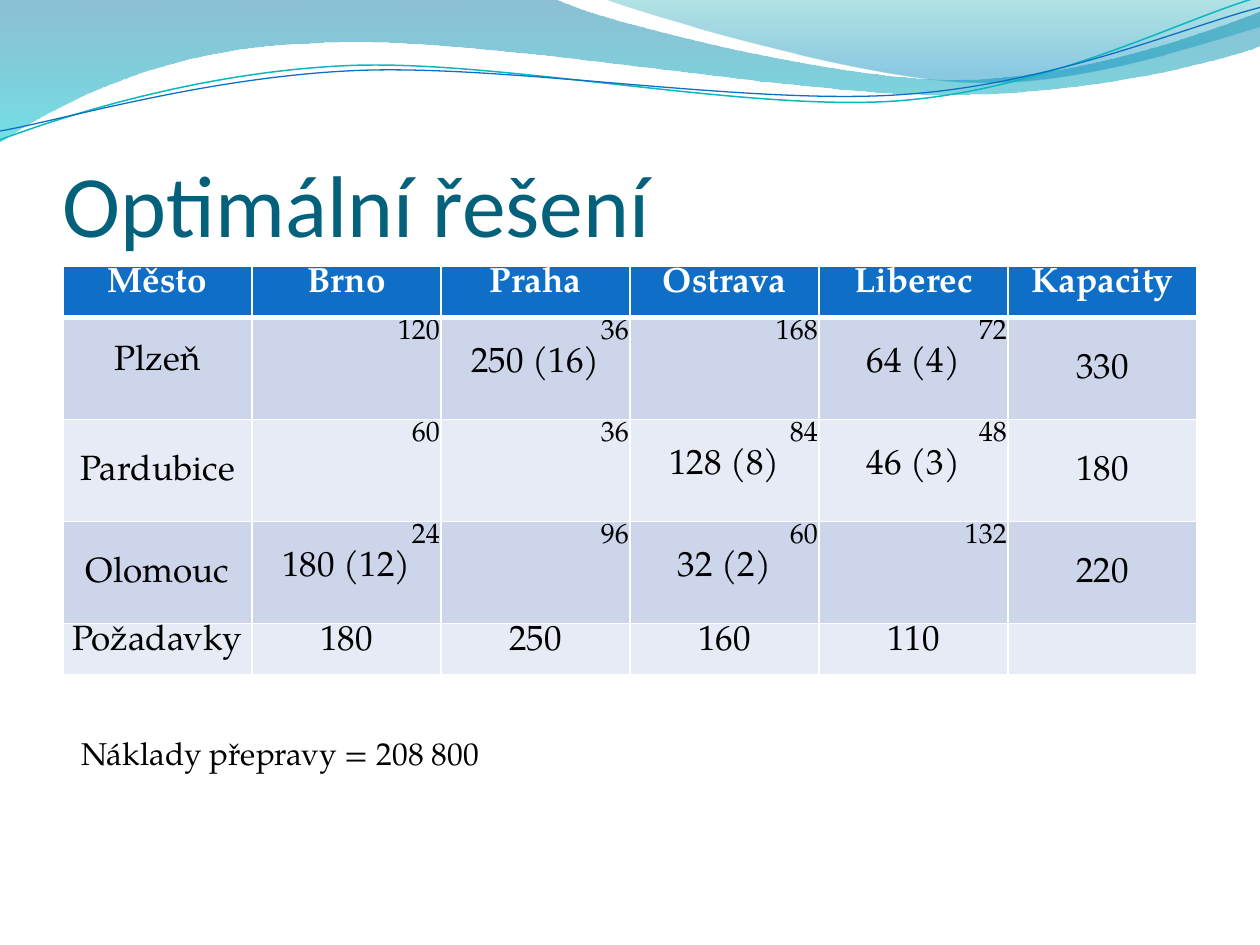
from math import cos, radians, sin

from lxml.etree import SubElement
from pptx import Presentation
from pptx.dml.color import RGBColor
from pptx.enum.text import MSO_ANCHOR, PP_ALIGN
from pptx.oxml import parse_xml
from pptx.oxml.ns import nsdecls, qn
from pptx.util import Inches, Pt

HEADING_FONT, BODY_FONT = "Calibri", "TeX Gyre Pagella"
WHITE, BLACK, BLUE, TEAL = "FFFFFF", "000000", "0F6FC6", "04617B"
BANDS = ("CCD5EA", "E7EBF5")

TITLE = "Optimální řešení"
COST = "Náklady přepravy = 208 800"
HEADER = ["Město", "Brno", "Praha", "Ostrava", "Liberec", "Kapacity"]
# City, (unit cost, shipment) per destination, capacity
ROUTES = [
    ("Plzeň", [("120", ""), ("36", "250 (16)"), ("168", ""), ("72", "64 (4)")], "330"),
    ("Pardubice", [("60", ""), ("36", ""), ("84", "128 (8)"), ("48", "46 (3)")], "180"),
    ("Olomouc", [("24", "180 (12)"), ("96", ""), ("60", "32 (2)"), ("132", "")], "220"),
]
DEMAND = ["Požadavky", "180", "250", "160", "110", ""]
ROW_HEIGHTS = [0.41, 0.81, 0.81, 0.81, 0.41]
COLUMN_WIDTH = 1.5
LINE_16, LINE_20 = 0.22, 0.28  # room above a name or capacity: one line of 16 or 20 points

# A path is a start point and then steps: 2 numbers for a line, 6 for a curve.
WAVES = [
    ((0, 0),
     [(4.4, -0.01), (4.76, 0.17, 6.64, 0.63, 7.58, 0.63),
      (8.53, 0.63, 9.58, 0.26, 10, 0.09), (10.01, 0.36),
      (9.83, 0.44, 8.7, 0.76, 7.46, 0.75), (6.22, 0.75, 3.82, 0.28, 2.57, 0.34),
      (1.29, 0.36, 0.46, 0.83, -0.01, 1.13)],
     [(0, "0074A1", 45), (100, "00C6CF", 55)]),
    ((4.79, -0.01),
     [(5.09, 0.11, 6.82, 0.62, 7.69, 0.65), (8.56, 0.69, 9.61, 0.32, 10, 0.21), (10, 0)],
     [(0, "00A1A9", 30), (80, "008BBF", 45)]),
]
STRAND_TILT = -2.7
STRANDS = [
    ((0, 1.11),
     [(0.48, 0.93, 1.58, 0.57, 2.77, 0.52), (3.95, 0.47, 5.93, 0.89, 7.13, 0.8),
      (8.33, 0.71, 9.38, 0.15, 9.98, -0.02)], (4.99, 0.57), "0AB8BF", 0.85),
    ((0, 1.04),
     [(0.47, 0.96, 1.64, 0.61, 2.83, 0.56), (4.03, 0.51, 5.97, 0.84, 7.17, 0.75),
      (8.36, 0.67, 9.41, 0.21, 10, 0.06)], (5, 0.59), BLUE, 0.75),
]


def color(value):
    return RGBColor.from_string(value)


def turn(point, center, degrees):
    angle = radians(degrees)
    x, y = point[0] - center[0], point[1] - center[1]
    return (center[0] + x * cos(angle) - y * sin(angle),
            center[1] + x * sin(angle) + y * cos(angle))


def add_path(slide, start, steps, close, center=(0, 0), tilt=0):
    """Draw a path of lines and curves; a tilt is held as the rotation of the shape."""
    points = [start] + [step[i:i + 2] for step in steps for i in range(0, len(step), 2)]
    points = [tuple(map(Inches, turn(point, center, -tilt))) for point in points]
    builder = slide.shapes.build_freeform(*points[0])
    builder.add_line_segments(points[1:], close=close)
    shape = builder.convert_to_shape()
    shape.shadow.inherit = False
    shape.rotation = tilt

    # Each curve came out as three line segments: join them into one Bezier segment.
    segments = iter(list(shape._element.iter(qn("a:lnTo"))))
    for step in steps:
        segment = next(segments)
        if len(step) == 6:
            segment.tag = qn("a:cubicBezTo")
            for _ in range(2):
                extra = next(segments)
                segment.append(extra[0])
                extra.getparent().remove(extra)
    return shape


def fill_gradient(shape, stops):
    """Fill from top to bottom with stops of (position, colour, opacity) in percent."""
    shape.fill.background()
    marks = "".join(
        f'<a:gs pos="{position * 1000}"><a:srgbClr val="{value}">'
        f'<a:alpha val="{opacity * 1000}"/></a:srgbClr></a:gs>'
        for position, value, opacity in stops)
    gradient = parse_xml(f'<a:gradFill {nsdecls("a")}><a:gsLst>{marks}</a:gsLst>'
                         '<a:lin ang="5400000" scaled="0"/></a:gradFill>')
    properties = shape._element.spPr
    properties.replace(properties.find(qn("a:noFill")), gradient)


def add_run(paragraph, text, size, value=BLACK, font=BODY_FONT, bold=False):
    run = paragraph.add_run()
    run.text = text
    run.font.name, run.font.size, run.font.bold = font, Pt(size), bold
    run.font.color.rgb = color(value)


def add_text(slide, box, text, size, value, font):
    frame = slide.shapes.add_textbox(*map(Inches, box)).text_frame
    frame.word_wrap = True
    add_run(frame.paragraphs[0], text, size, value, font)
    return frame


def set_borders(cell, top, bottom):
    properties = cell._tc.get_or_add_tcPr()
    for index, (side, width) in enumerate(
            [("L", 1), ("R", 1), ("T", top), ("B", bottom)]):
        line = SubElement(properties, qn(f"a:ln{side}"), w=str(Pt(width)))
        fill = SubElement(line, qn("a:solidFill"))
        SubElement(fill, qn("a:srgbClr"), val=WHITE)
        properties.insert(index, line)


def fill_cell(cell, lines, fill, top_margin=0.01, value=BLACK, bold=False):
    """Write lines of (text, size, alignment), leaving out the empty ones."""
    cell.fill.solid()
    cell.fill.fore_color.rgb = color(fill)
    cell.margin_left = cell.margin_right = Inches(0.01)
    cell.margin_top, cell.margin_bottom = Inches(top_margin), 0
    shown = [line for line in lines if line[0]]
    for index, (text, size, alignment) in enumerate(shown):
        frame = cell.text_frame
        paragraph = frame.add_paragraph() if index else frame.paragraphs[0]
        paragraph.alignment = alignment
        add_run(paragraph, text, size, value, bold=bold)


def add_transport_table(slide):
    center, right = PP_ALIGN.CENTER, PP_ALIGN.RIGHT
    table = slide.shapes.add_table(
        len(ROW_HEIGHTS), len(HEADER), Inches(0.5), Inches(2.11),
        Inches(COLUMN_WIDTH * len(HEADER)), Inches(sum(ROW_HEIGHTS))).table
    for column in table.columns:
        column.width = Inches(COLUMN_WIDTH)
    for row, height in zip(table.rows, ROW_HEIGHTS):
        row.height = Inches(height)

    last = len(ROW_HEIGHTS) - 1
    for column, (name, demand) in enumerate(zip(HEADER, DEMAND)):
        fill_cell(table.cell(0, column), [(name, 20, center)], BLUE, value=WHITE, bold=True)
        fill_cell(table.cell(last, column), [(demand, 20, center)], BANDS[1])
    for row, (city, routes, capacity) in enumerate(ROUTES, 1):
        band = BANDS[(row - 1) % 2]
        city_margin = LINE_16 if row == 1 else LINE_20
        fill_cell(table.cell(row, 0), [(city, 20, center)], band, city_margin)
        for column, (cost, shipment) in enumerate(routes, 1):
            fill_cell(table.cell(row, column),
                      [(cost, 16, right), (shipment, 20, center)], band)
        fill_cell(table.cell(row, len(HEADER) - 1), [(capacity, 20, center)], band, LINE_20)

    for row in range(len(ROW_HEIGHTS)):
        for column in range(len(HEADER)):
            set_borders(table.cell(row, column), 3 if row == 1 else 1, 3 if row == 0 else 1)


def main():
    presentation = Presentation()
    presentation.slide_width, presentation.slide_height = Inches(10), Inches(7.5)
    slide = presentation.slides.add_slide(presentation.slide_layouts[6])

    for start, steps, stops in WAVES:
        wave = add_path(slide, start, steps, close=True)
        fill_gradient(wave, stops)
        wave.line.fill.background()
    for start, steps, center, value, width in STRANDS:
        strand = add_path(slide, start, steps, False, center, STRAND_TILT)
        strand.fill.background()
        strand.line.color.rgb = color(value)
        strand.line.width = Pt(width)

    title = add_text(slide, (0.5, 0.77, 9, 1.25), TITLE, 50, TEAL, HEADING_FONT)
    title.vertical_anchor = MSO_ANCHOR.BOTTOM
    title.margin_left = title.margin_right = title.margin_bottom = 0
    add_transport_table(slide)
    add_text(slide, (0.55, 5.78, 4.84, 0.4), COST, 18, BLACK, BODY_FONT)
    presentation.save("out.pptx")


if __name__ == "__main__":
    main()
